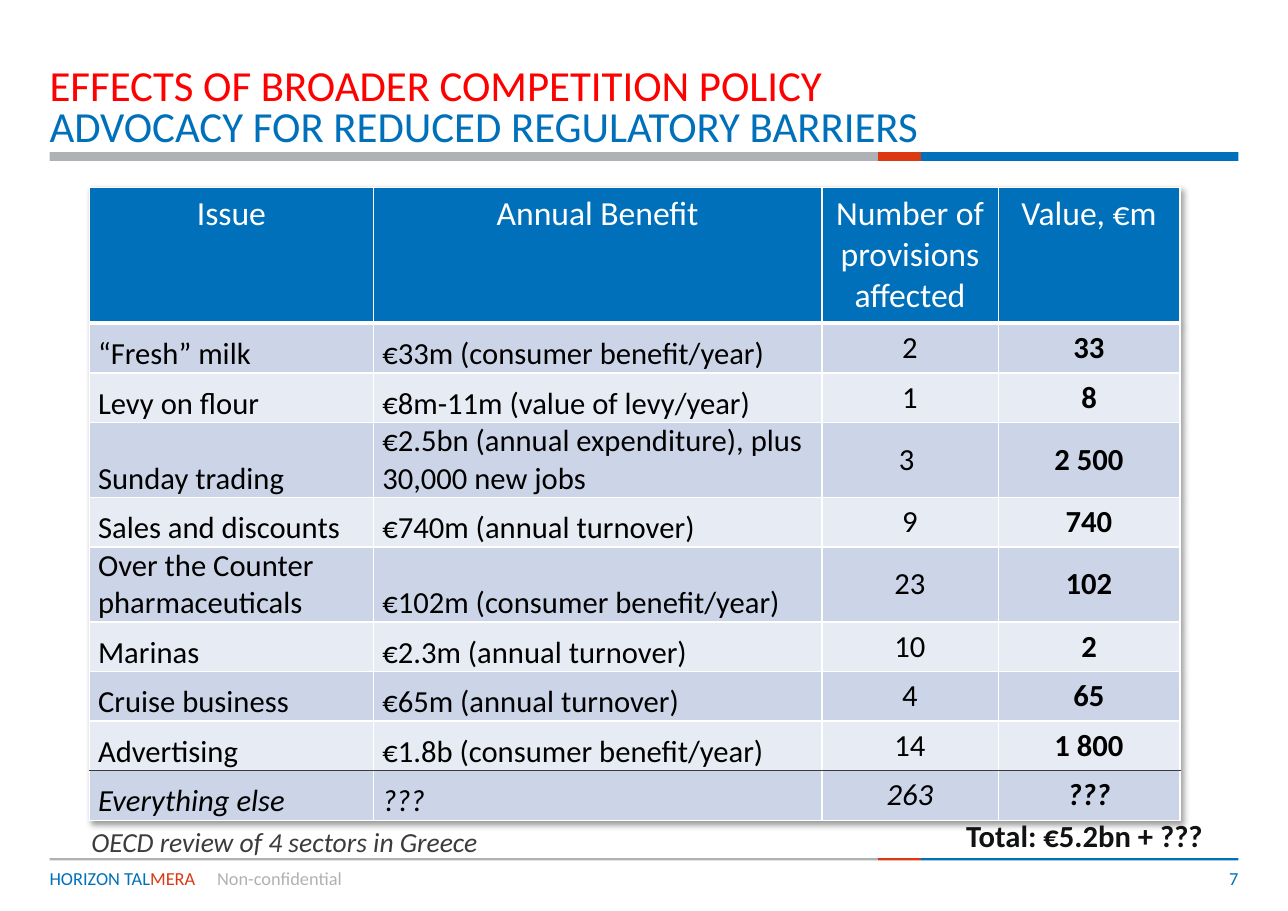
from lxml import etree
from pptx import Presentation
from pptx import util as u
from pptx.dml.color import RGBColor
from pptx.enum import shapes, text
from pptx.oxml import parse_xml
from pptx.oxml.ns import nsdecls, qn

COLORS = {"blue": "0070BA", "red": "FF0000", "orange": "DA3912", "grey": "AFB2B5",
          "dark": "3C3C3C", "ink": "111212", "black": "000000", "white": "FFFFFF",
          "band": "CCD5E7", "light": "E7EBF3"}
LEFT, MIDDLE = 0.45, text.MSO_ANCHOR.MIDDLE
BOTTOM, TOP = text.MSO_ANCHOR.BOTTOM, text.MSO_ANCHOR.TOP
CENTER, RIGHT = text.PP_ALIGN.CENTER, text.PP_ALIGN.RIGHT

HEADER = ["Issue", "Annual Benefit", "Number of provisions affected", "Value, €m"]
ROWS = [
    ("“Fresh” milk", "€33m (consumer benefit/year)", "2", "33"),
    ("Levy on flour", "€8m-11m (value of levy/year)", "1", "8"),
    ("Sunday trading", "€2.5bn (annual expenditure), plus 30,000 new jobs", "3 ", "2 500"),
    ("Sales and discounts", "€740m (annual turnover)", "9", "740"),
    ("Over the Counter pharmaceuticals", "€102m (consumer benefit/year)", "23", "102"),
    ("Marinas", "€2.3m (annual turnover)", "10", "2"),
    ("Cruise business", "€65m (annual turnover)", "4", "65"),
    ("Advertising", "€1.8b (consumer benefit/year)", "14", "1 800"),
    ("Everything else", "???", "263", "???"),
]
COL_WIDTHS = [2.58, 4.07, 1.6, 1.65]
HEADER_HEIGHT, ROW_HEIGHT, TALL_HEIGHT = 1.21, 0.45, 0.68
TALL_ROWS = (3, 5)

BAND_PARTS = [("grey", 7.52), ("orange", 0.39), ("blue", 2.88)]
BANDS = [(1.38, 0.08), (7.79, 0.02)]  # top, height

# box, lines of (text, colour) runs, font format, frame format, paragraph format
FLUSH = dict(margin_left=0, margin_right=0, margin_top=0, margin_bottom=0)
TEXTS = [
    ((LEFT, 0.62, 10.79, 0.47),
     [[("EFFECTS OF BROADER COMPETITION POLICY", "red")],
      [("ADVOCACY FOR REDUCED REGULATORY BARRIERS", "blue")]],
     dict(size=u.Pt(28)), FLUSH, dict(line_spacing=0.8)),
    ((LEFT, 7.87, 1.57, 0.2), [[("HORIZON TAL", "blue"), ("MERA", "orange")]],
     dict(size=u.Pt(12)), FLUSH, {}),
    ((1.97, 7.87, 8.81, 0.2), [[("Non-confidential", "grey")]],
     dict(size=u.Pt(12)), dict(FLUSH, vertical_anchor=BOTTOM), {}),
    ((10.81, 7.87, 0.43, 0.2), [[("7", "blue")]],
     dict(size=u.Pt(12)), dict(FLUSH, vertical_anchor=BOTTOM), dict(alignment=RIGHT)),
    ((0.73, 7.44, 9.22, 0.5), [[("OECD review of 4 sectors in Greece", "dark")]],
     dict(size=u.Pt(18), italic=True), {}, {}),
    ((8.67, 7.37, 2.37, 0.44), [[("Total: €5.2bn + ???", "ink")]],
     dict(size=u.Pt(20), bold=True), dict(word_wrap=False), {}),
]


def rgb(name):
    return RGBColor.from_string(COLORS[name])


def apply(obj, formats):
    for name, value in formats.items():
        setattr(obj, name, value)


def add_run(p, words, color, font):
    r = p.add_run()
    r.text = words
    apply(r.font, dict(name="Calibri", **font))
    r.font.color.rgb = rgb(color)


def add_text(s, box, lines, font, frame, para):
    tf = s.shapes.add_textbox(*map(u.Inches, box)).text_frame
    apply(tf, dict(dict(word_wrap=True), **frame))
    for i, line in enumerate(lines):
        p = tf.add_paragraph() if i else tf.paragraphs[0]
        apply(p, para)
        for words, color in line:
            add_run(p, words, color, font)


def add_band(s, top, height):
    left = LEFT
    for color, width in BAND_PARTS:
        sp = s.shapes.add_shape(shapes.MSO_SHAPE.RECTANGLE,
                                *map(u.Inches, (left, top, width, height)))
        sp.shadow.inherit = False
        sp.fill.solid()
        sp.fill.fore_color.rgb = rgb(color)
        sp.line.fill.background()
        left += width


def set_borders(cell, **special):
    """White 1 pt on every side, except the sides given as (colour, points)."""
    tc_pr = cell._tc.get_or_add_tcPr()
    for i, side in enumerate("LRTB"):
        color, points = special.get(side, ("white", 1))
        ln = etree.Element(qn(f"a:ln{side}"), w=str(u.Pt(points)))
        fill = etree.SubElement(ln, qn("a:solidFill"))
        etree.SubElement(fill, qn("a:srgbClr"), val=COLORS[color])
        tc_pr.insert(i, ln)


def fill_cell(cell, words, row, col):
    last = len(ROWS)
    if row == 0:
        color, fill, anchor, margins = "white", "blue", TOP, (0.11, 0.06)
        font, borders = dict(size=u.Pt(22)), {"B": ("white", 3)}
    else:
        color, fill = "black", "band" if row % 2 else "light"
        anchor, margins = BOTTOM if col < 2 else MIDDLE, (0.08, 0)
        font = dict(size=u.Pt(20), bold=col == 3, italic=row == last)
        borders = {1: {"T": ("white", 3)}, last - 1: {"B": ("dark", 1)},
                   last: {"T": ("dark", 1)}}.get(row, {})
    side, edge = map(u.Inches, margins)
    apply(cell, dict(margin_left=side, margin_right=side, margin_top=edge,
                     margin_bottom=edge, vertical_anchor=anchor))
    cell.fill.solid()
    cell.fill.fore_color.rgb = rgb(fill)
    set_borders(cell, **borders)
    p = cell.text_frame.paragraphs[0]
    if row == 0 or col > 1:
        p.alignment = CENTER
    add_run(p, words, color, font)


def add_benefit_table(s):
    heights = [HEADER_HEIGHT] + [TALL_HEIGHT if i in TALL_ROWS else ROW_HEIGHT
                                 for i in range(1, len(ROWS) + 1)]
    box = (0.81, 1.7, sum(COL_WIDTHS), sum(heights))
    table = s.shapes.add_table(len(heights), len(COL_WIDTHS), *map(u.Inches, box)).table
    apply(table, dict(first_row=False, horz_banding=False))
    table._tbl.tblPr.insert(0, parse_xml(
        f'<a:effectLst {nsdecls("a")}><a:outerShdw blurRad="50800" dist="38100" dir="2700000">'
        '<a:srgbClr val="000000"><a:alpha val="40000"/></a:srgbClr></a:outerShdw></a:effectLst>'))
    for column, width in zip(table.columns, COL_WIDTHS):
        column.width = u.Inches(width)
    for row, (height, cells) in enumerate(zip(heights, [HEADER] + ROWS)):
        table.rows[row].height = u.Inches(height)
        for col, words in enumerate(cells):
            fill_cell(table.cell(row, col), words, row, col)


def main():
    prs = Presentation()
    prs.slide_width, prs.slide_height = u.Inches(11.69), u.Inches(8.27)
    s = prs.slides.add_slide(prs.slide_layouts[6])
    for top, height in BANDS:
        add_band(s, top, height)
    add_benefit_table(s)
    for item in TEXTS:
        add_text(s, *item)
    prs.save("out.pptx")


if __name__ == "__main__":
    main()
